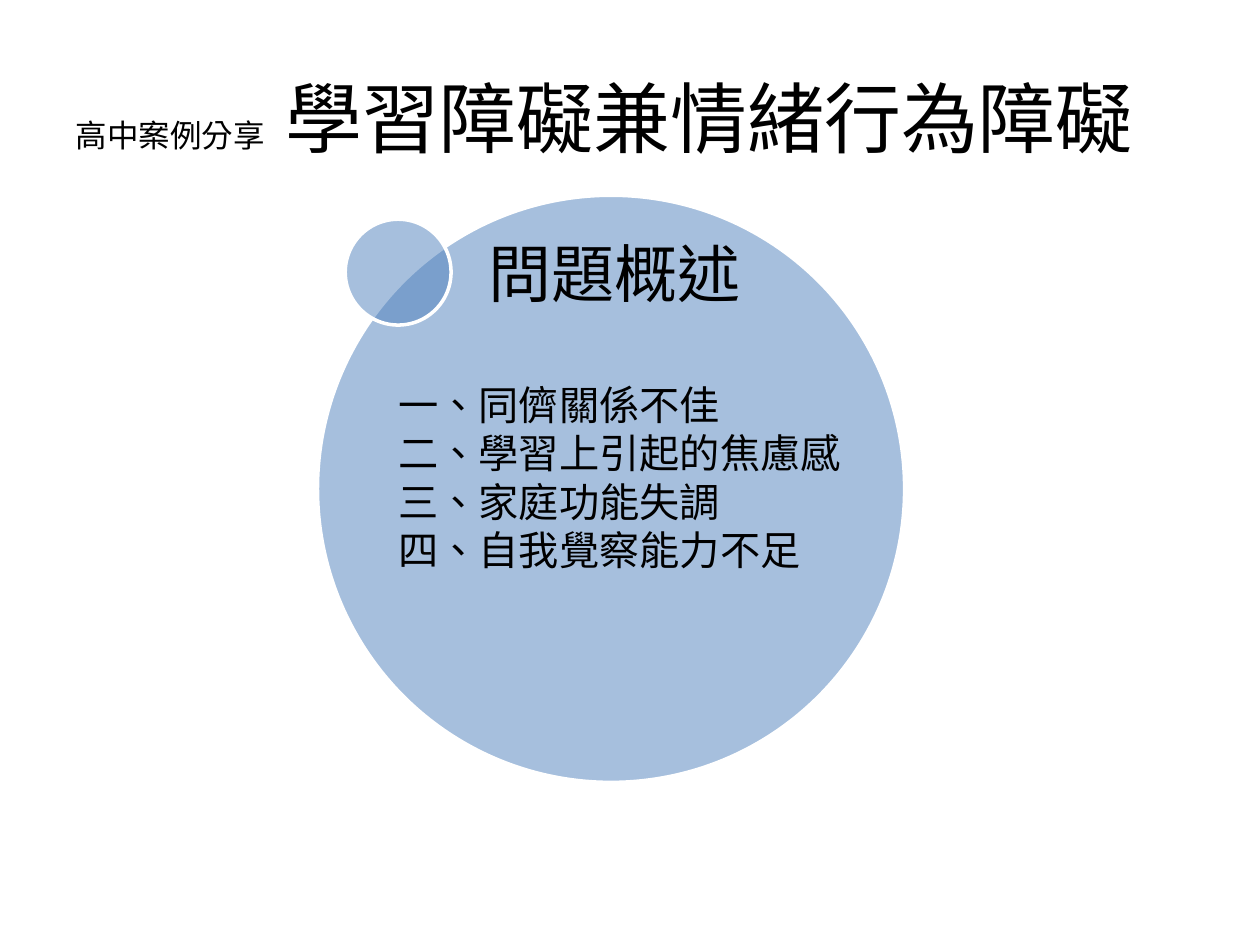
from lxml import etree
from pptx import Presentation
from pptx.dml.color import RGBColor
from pptx.enum.shapes import MSO_SHAPE
from pptx.enum.text import MSO_ANCHOR, MSO_AUTO_SIZE, PP_ALIGN
from pptx.oxml.ns import qn
from pptx.util import Inches, Pt

OVAL = MSO_SHAPE.OVAL
TOP, MIDDLE = MSO_ANCHOR.TOP, MSO_ANCHOR.MIDDLE
LEFT, CENTER = PP_ALIGN.LEFT, PP_ALIGN.CENTER
CJK = "Noto Sans CJK SC"
BLUE, WHITE, BLACK = "4F81BD", "FFFFFF", "000000"

# The wide space between the title's two parts has its own size.
TITLE = [("高中案例分享", 18), ("　", 12), ("學習障礙兼情緒行為障礙", 44)]
HEAD = "問題概述"
ITEMS = ["一、同儕關係不佳", "二、學習上引起的焦慮感",
         "三、家庭功能失調", "四、自我覺察能力不足"]

TITLE_BOX = (0.5, 0.3, 9, 1.25)
DISCS = [(2.52, 1.55, 4.66), (2.74, 1.74, 0.84)]  # left, top, width
HEAD_BOX = (2.64, 1.74, 4.48, 0.84)
LIST_BOX = (3.16, 2.89, 4.48, 3.06)


def color(code):
    return RGBColor.from_string(code)


def put(item, values):
    for name, value in values.items():
        setattr(item, name, value)


def place(shape, box):
    names = ("left", "top", "width", "height")
    put(shape, dict(zip(names, map(Inches, box))))


def add_run(para, text, size, face=CJK):
    run = para.add_run()
    run.text = text
    put(run.font, {"size": Pt(size), "name": face})
    run.font.color.rgb = color(BLACK)
    props = run.font._element
    props.set("lang", "zh-TW")
    east = etree.Element(qn("a:ea"), typeface=CJK)
    props.find(qn("a:latin")).addnext(east)


def add_disc(group, left, top, width):
    disc = group.shapes.add_shape(OVAL, *map(Inches, (left, top, width, width)))
    disc.shadow.inherit = False
    disc.fill.solid()
    disc.fill.fore_color.rgb = color(BLUE)
    tone = disc._element.spPr.find(qn("a:solidFill"))[0]
    etree.SubElement(tone, qn("a:alpha"), val="50000")
    disc.line.color.rgb = color(WHITE)
    disc.line.width = Pt(2)


def add_text(group, box, lines, size, face, frame_form, para_form):
    frame = group.shapes.add_textbox(*map(Inches, box)).text_frame
    put(frame, {"word_wrap": True, "margin_left": 0, "margin_right": 0,
                **frame_form})
    for i, line in enumerate(lines):
        para = frame.add_paragraph() if i else frame.paragraphs[0]
        put(para, para_form)
        add_run(para, line, size, face)


def main():
    deck = Presentation()
    put(deck, {"slide_width": Inches(10), "slide_height": Inches(7.5)})
    slide = deck.slides.add_slide(deck.slide_layouts[5])

    title = slide.shapes.title
    place(title, TITLE_BOX)
    put(title.text_frame, {"vertical_anchor": MIDDLE, "word_wrap": True,
                           "auto_size": MSO_AUTO_SIZE.NONE})
    para = title.text_frame.paragraphs[0]
    para.alignment = LEFT
    for text, size in TITLE:
        add_run(para, text, size)

    group = slide.shapes.add_group_shape()
    for disc in DISCS:
        add_disc(group, *disc)
    add_text(group, HEAD_BOX, [HEAD], 36, CJK,
             {"vertical_anchor": MIDDLE}, {"alignment": CENTER})
    add_text(group, LIST_BOX, ITEMS, 23, "Calibri",
             {"vertical_anchor": TOP, "margin_top": Inches(0.17)},
             {"alignment": LEFT, "line_spacing": 0.9, "space_after": Pt(2.9)})
    deck.save("out.pptx")


if __name__ == "__main__":
    main()
